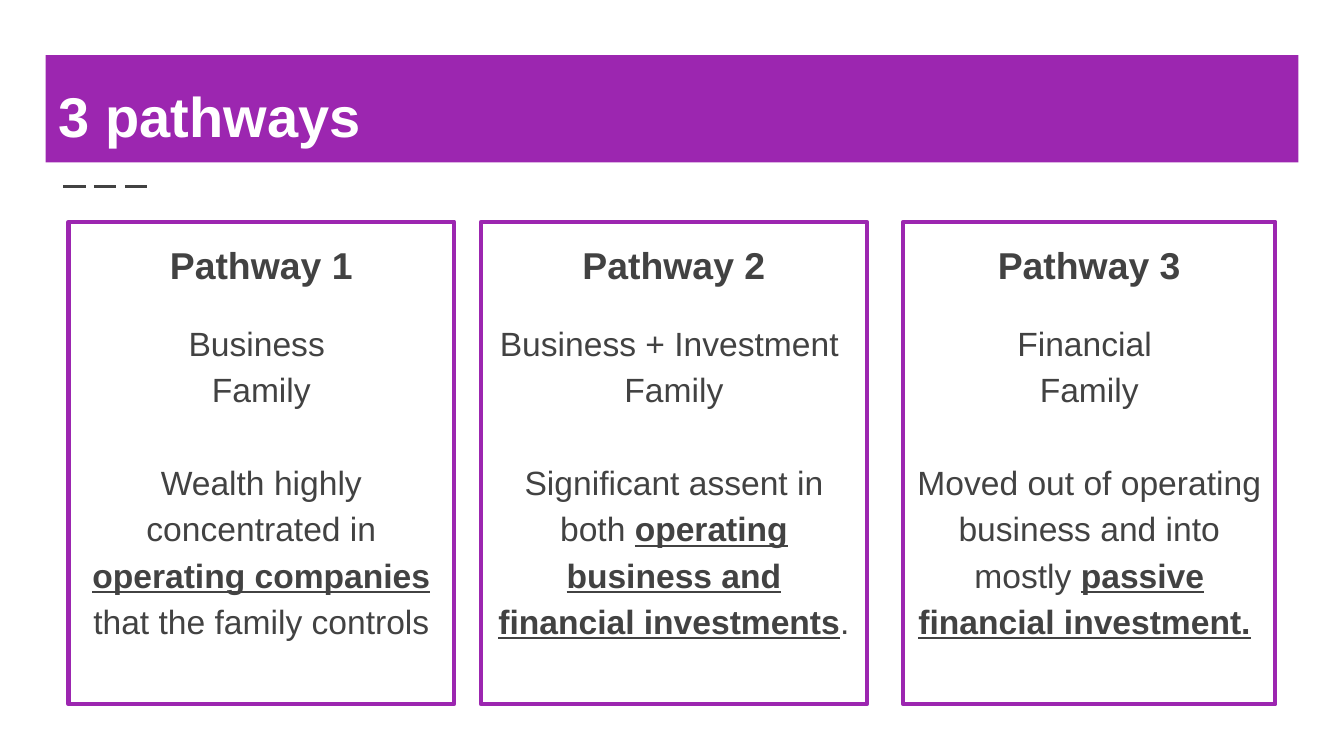
from lxml import etree
from pptx import Presentation
from pptx.dml.color import RGBColor
from pptx.enum.dml import MSO_LINE_DASH_STYLE as Dash
from pptx.enum.shapes import MSO_CONNECTOR as Connector, MSO_SHAPE as Shape
from pptx.enum.text import MSO_ANCHOR as Anchor, PP_ALIGN as Align
from pptx.oxml.ns import qn
from pptx.util import Inches, Pt

PURPLE = "9C26B0"
GRAY = "424242"
WHITE = "FFFFFF"

PATHWAYS = [
    (0.51, 2.87, "Pathway 1", "Business ",
     ("Wealth highly concentrated in ", "operating companies ",
      "that the family controls")),
    (3.58, 2.87, "Pathway 2", "Business + Investment ",
     ("Significant assent in both ",
      "operating business and financial investments", ". ")),
    (6.72, 2.77, "Pathway 3", "Financial ",
     ("Moved out of operating business and into mostly ",
      "passive financial investment.", " ")),
]


def color(value):
    return RGBColor.from_string(value)


def style_font(paragraph, size, value, bold=False):
    font = paragraph.font
    font.name = "Arial"
    font.size = Pt(size)
    font.bold = bold
    font.color.rgb = color(value)


def add_box(slide, left, top, width, height, anchor):
    shape = slide.shapes.add_shape(
        Shape.RECTANGLE, Inches(left), Inches(top), Inches(width), Inches(height))
    shape.shadow.inherit = False
    frame = shape.text_frame
    frame.word_wrap = True
    frame.vertical_anchor = anchor
    frame.margin_left = frame.margin_right = Inches(0.1)
    frame.margin_top = frame.margin_bottom = Inches(0.1)
    return shape


def add_title(slide, text):
    shape = add_box(slide, 0.34, 0.41, 9.32, 0.8, Anchor.BOTTOM)
    shape.fill.solid()
    shape.fill.fore_color.rgb = color(PURPLE)
    shape.line.fill.background()
    paragraph = shape.text_frame.paragraphs[0]
    paragraph.text = text
    paragraph.alignment = Align.LEFT
    style_font(paragraph, 30, WHITE, bold=True)


def add_dashes(slide):
    line = slide.shapes.add_connector(
        Connector.STRAIGHT, Inches(0.47), Inches(1.39), Inches(1.14), Inches(1.39))
    line.line.color.rgb = color(GRAY)
    line.line.width = Pt(1.5)
    line.line.dash_style = Dash.LONG_DASH
    etree.SubElement(line._element.spPr, qn("a:effectLst"))


def add_pathway(slide, left, width, heading, kind, description):
    shape = add_box(slide, left, 1.65, width, 3.59, Anchor.TOP)
    shape.fill.background()
    shape.line.color.rgb = color(PURPLE)
    shape.line.width = Pt(2.25)
    frame = shape.text_frame
    before, emphasis, after = description
    rows = [
        ([heading], 20, 0),
        ([kind], 18, 16),
        (["Family"], 18, 0),
        ([before, emphasis, after], 18, 25),
    ]
    for index, (texts, size, gap) in enumerate(rows):
        paragraph = frame.add_paragraph() if index else frame.paragraphs[0]
        paragraph.alignment = Align.CENTER
        paragraph.line_spacing = 1.15
        paragraph.space_before = Pt(gap)
        style_font(paragraph, size, GRAY, bold=index == 0)
        for text in texts:
            run = paragraph.add_run()
            run.text = text
            if text == emphasis:
                run.font.bold = True
                run.font.underline = True


def main():
    presentation = Presentation()
    presentation.slide_width = Inches(10)
    presentation.slide_height = presentation.slide_width * 9 // 16
    slide = presentation.slides.add_slide(presentation.slide_layouts[6])
    add_dashes(slide)
    for pathway in PATHWAYS:
        add_pathway(slide, *pathway)
    add_title(slide, "3 pathways")
    presentation.save("out.pptx")


if __name__ == "__main__":
    main()
